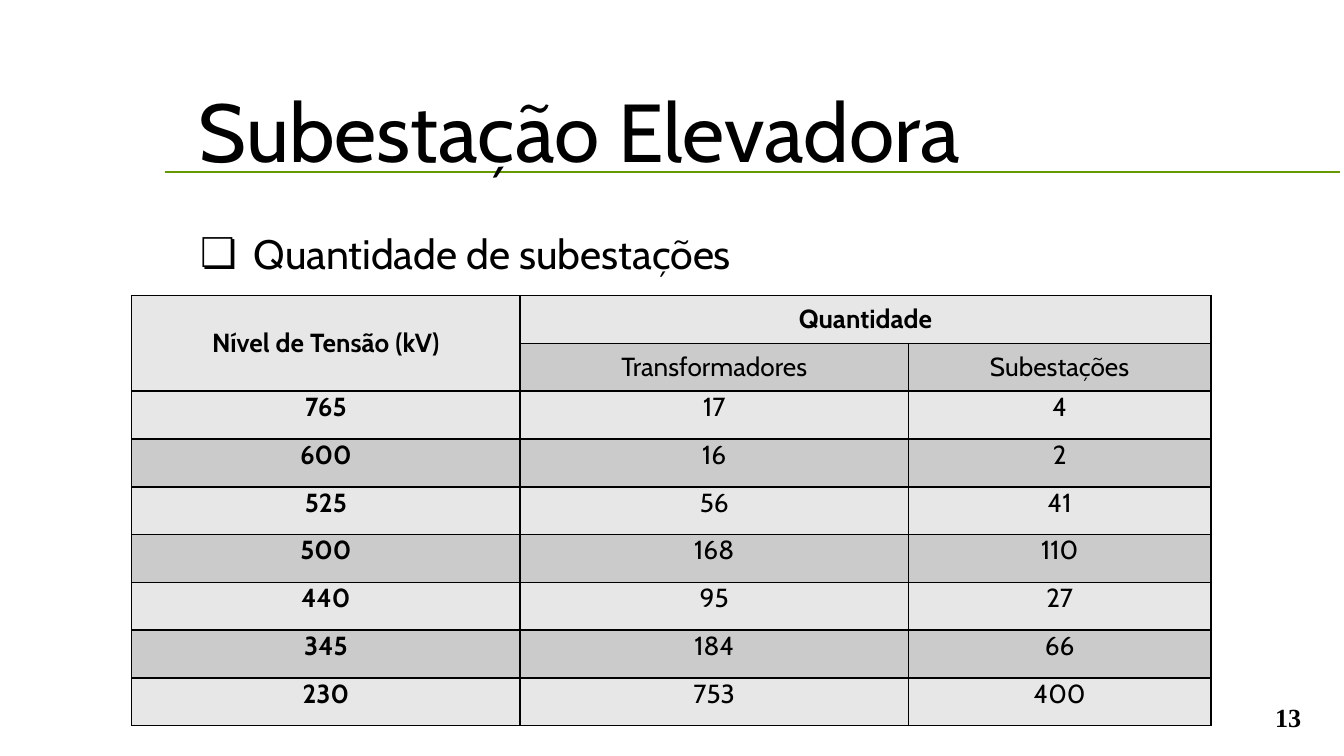
from lxml.etree import SubElement
from pptx import Presentation
from pptx.dml.color import RGBColor
from pptx.enum.shapes import MSO_CONNECTOR
from pptx.enum.text import MSO_ANCHOR, PP_ALIGN
from pptx.oxml.ns import qn
from pptx.util import Inches, Pt

BLACK, GREEN = "000000", "669900"
BANDS = ("E7E7E7", "CBCBCB")
COLUMN_WIDTHS = (2.89, 2.89, 2.25)
ROWS = (
    ("Nível de Tensão (kV)", "Quantidade", ""),
    ("", "Transformadores", "Subestações"),
    ("765", "17", "4"),
    ("600", "16", "2"),
    ("525", "56", "41"),
    ("500", "168", "110"),
    ("440", "95", "27"),
    ("345", "184", "66"),
    ("230", "753", "400"),
)


def color(value):
    """Turn a hex string into a colour."""
    return RGBColor.from_string(value)


def style_font(font, size, name="Cabin", bold=False):
    """Set size, family and weight of black text."""
    font.size, font.name, font.bold = Pt(size), name, bold
    font.color.rgb = color(BLACK)


def add_text(page, box, text, size, anchor=MSO_ANCHOR.TOP, align=PP_ALIGN.LEFT,
             name="Cabin", bold=False):
    """Add one line of text in a box and return its paragraph."""
    frame = page.shapes.add_textbox(*map(Inches, box)).text_frame
    frame.word_wrap = True
    frame.vertical_anchor = anchor
    frame.text = text
    para = frame.paragraphs[0]
    para.alignment = align
    style_font(para.runs[0].font, size, name, bold)
    return para


def add_heading(page, box):
    """Add the title with the green rule along its bottom edge."""
    left, top, width, height = box
    rule_y = Inches(top + height - 0.1)
    rule = page.shapes.add_connector(
        MSO_CONNECTOR.STRAIGHT, Inches(left - 0.15), rule_y, Inches(left + 8.59), rule_y)
    rule.line.color.rgb = color(GREEN)
    rule.line.width = Pt(1)
    SubElement(rule.element.spPr, qn("a:effectLst"))
    add_text(page, box, "Subestação Elevadora", 44, MSO_ANCHOR.BOTTOM)


def add_bullet(page, box):
    """Add the bulleted subtitle."""
    para = add_text(page, box, "Quantidade de subestações", 22, align=PP_ALIGN.JUSTIFY)
    properties = para._p.get_or_add_pPr()
    properties.set("marL", str(Inches(0.5)))
    properties.set("indent", str(Inches(-0.4)))
    bullet_color = SubElement(properties, qn("a:buClr"))
    SubElement(bullet_color, qn("a:srgbClr"), val=BLACK)
    SubElement(properties, qn("a:buFont"), typeface="Cabin")
    SubElement(properties, qn("a:buChar"), char="❏")


def add_borders(cell):
    """Draw a thin black line on each side of a cell."""
    properties = cell._tc.get_or_add_tcPr()
    for side in ("lnL", "lnR", "lnT", "lnB"):
        line = SubElement(properties, qn(f"a:{side}"), w=str(Pt(1)))
        fill = SubElement(line, qn("a:solidFill"))
        SubElement(fill, qn("a:srgbClr"), val=BLACK)


def fill_cell(cell, text, band, bold, anchor):
    """Style a table cell and write its text."""
    add_borders(cell)
    cell.fill.solid()
    cell.fill.fore_color.rgb = color(band)
    cell.margin_left = cell.margin_right = Inches(0.07)
    cell.margin_top = cell.margin_bottom = 0
    cell.vertical_anchor = anchor
    cell.text = text
    para = cell.text_frame.paragraphs[0]
    para.alignment = PP_ALIGN.CENTER
    style_font(para.font, 14)
    for span in para.runs:
        style_font(span.font, 14, bold=bold)


def add_quantities(page, box):
    """Add the table of transformers and substations by voltage."""
    table = page.shapes.add_table(
        len(ROWS), len(COLUMN_WIDTHS), *map(Inches, box)).table
    for column, width in zip(table.columns, COLUMN_WIDTHS):
        column.width = Inches(width)
    for r, values in enumerate(ROWS):
        anchor = MSO_ANCHOR.MIDDLE if r < 2 else MSO_ANCHOR.TOP
        for c, value in enumerate(values):
            fill_cell(table.cell(r, c), value, BANDS[r % 2], r == 0 or c == 0, anchor)
    table.cell(0, 0).merge(table.cell(1, 0))
    table.cell(0, 1).merge(table.cell(0, 2))


def add_page_number(page, box):
    """Add the page number at the lower right."""
    add_text(page, box, "13", 14, MSO_ANCHOR.BOTTOM, PP_ALIGN.RIGHT,
             "Times New Roman", True)


def main():
    """Build and save the deck."""
    deck = Presentation()
    deck.slide_width, deck.slide_height = Inches(10), Inches(10 * 9 / 16)
    page = deck.slides.add_slide(deck.slide_layouts[6])
    add_heading(page, (1.38, 0.18, 8.4, 1.2))
    add_page_number(page, (7.7, 5.12, 2.08, 0.38))
    add_bullet(page, (1.29, 1.65, 8.5, 0.5))
    add_quantities(page, (0.98, 2.2, sum(COLUMN_WIDTHS), 3.2))
    deck.save("out.pptx")


if __name__ == "__main__":
    main()
